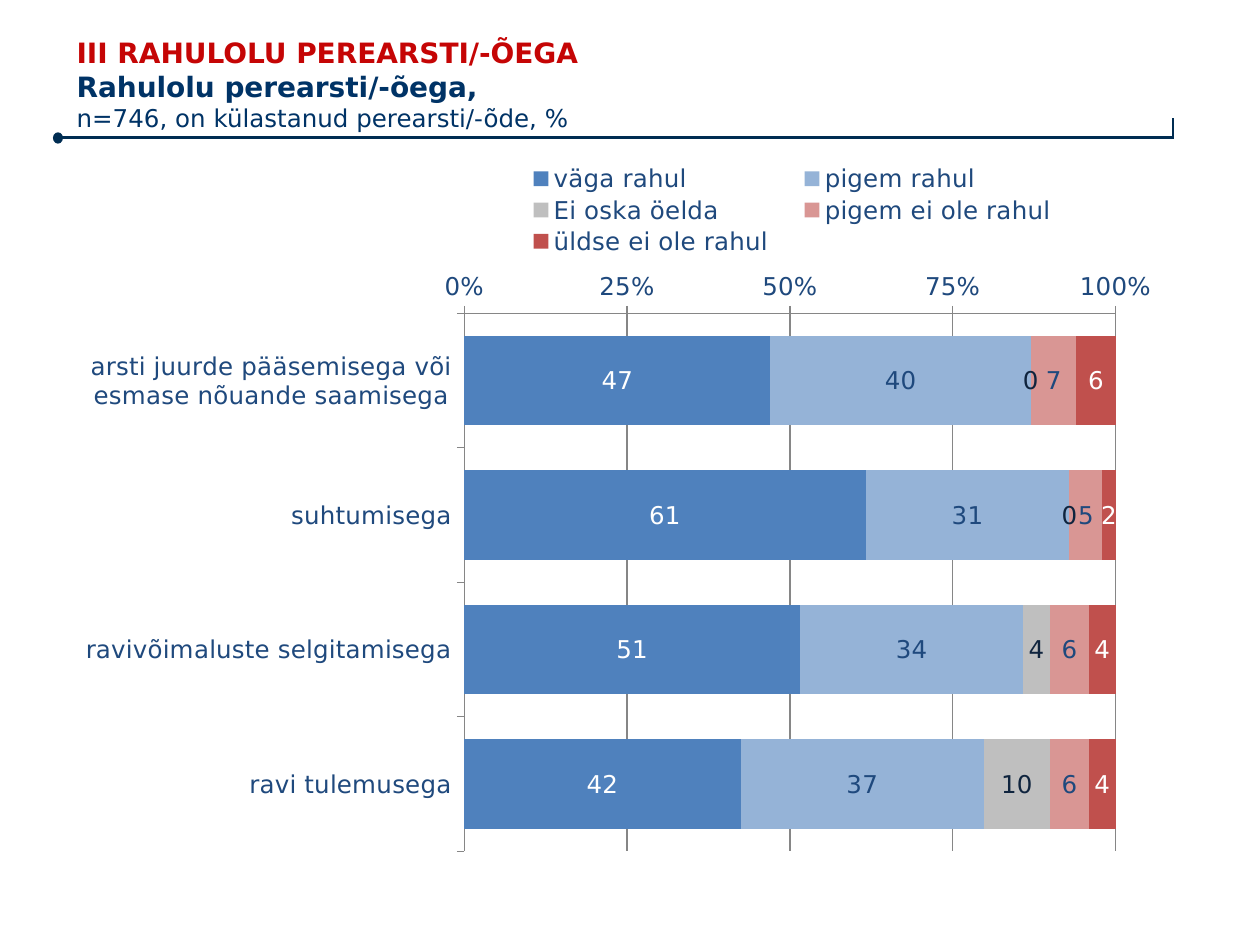
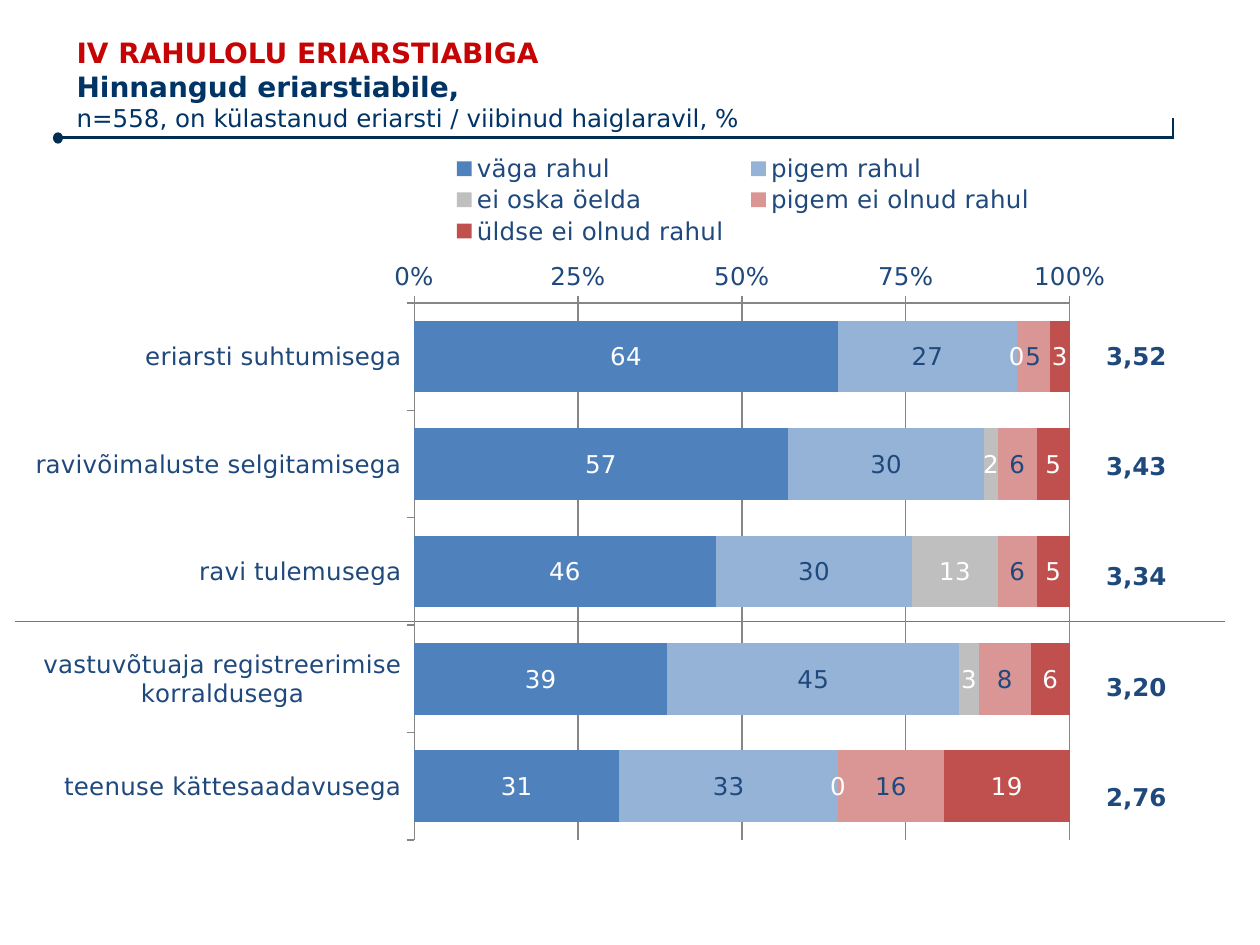
import pptx
import pptx.chart.data
import pptx.dml.color
import pptx.enum.chart
import pptx.enum.shapes
import pptx.enum.text
import pptx.util
import lxml.etree

Inches = pptx.util.Inches
Pt = pptx.util.Pt
FONT = "DejaVu Sans"
HUES = {
    "rule": "002D52", "head": "C50505", "title": "003366", "text": "1F497D",
    "split": "4B7EBC", "axis": "868686", "white": "FFFFFF", "dark": "0F243E",
    "very": "4F81BD", "rather": "95B3D7", "unsure": "BFBFBF",
    "hardly": "D99694", "never": "C0504D",
}
BARS = ["very", "rather", "unsure", "hardly", "never"]
PLOT = (0.358, 0.223, 0.59, 0.757)
HEAD = (0.51, 0.29, 8.19, 0.75)
RULE = (0.42, 0.94, 8.89, 0.16)
DRAW = "http://schemas.openxmlformats.org/drawingml/2006/main"
CHART = "http://schemas.openxmlformats.org/drawingml/2006/chart"

PAGES = [
    {
        "head": ["III RAHULOLU PEREARSTI/-ÕEGA", "Rahulolu perearsti/-õega,",
                 "n=746, on külastanud perearsti/-õde, %"],
        "box": (0.55, 1.23, 8.76, 5.64),
        "key": (0.395, 0.01, 0.52, 0.135),
        "cats": ["arsti juurde pääsemisega või esmase nõuande saamisega",
                 "suhtumisega", "ravivõimaluste selgitamisega", "ravi tulemusega"],
        "rows": [("väga rahul", (47, 61, 51, 42)),
                 ("pigem rahul", (40, 31, 34, 37)),
                 ("Ei oska öelda", (0, 0, 4, 10)),
                 ("pigem ei ole rahul", (7, 5, 6, 6)),
                 ("üldse ei ole rahul", (6, 2, 4, 4))],
        "tags": ["white", "text", "dark", "text", "white"],
    },
    {
        "head": ["IV RAHULOLU ERIARSTIABIGA", "Hinnangud eriarstiabile,",
                 "n=558, on külastanud eriarsti / viibinud haiglaravil, %"],
        "box": (0.13, 1.15, 8.82, 5.63),
        "key": (0.379, 0.01, 0.55, 0.135),
        "cats": ["eriarsti suhtumisega", "ravivõimaluste selgitamisega",
                 "ravi tulemusega", "vastuvõtuaja registreerimise korraldusega",
                 "teenuse kättesaadavusega"],
        "rows": [("väga rahul", (64, 57, 46, 39, 31)),
                 ("pigem rahul", (27, 30, 30, 45, 33)),
                 ("ei oska öelda", (0, 2, 13, 3, 0)),
                 ("pigem ei olnud rahul", (5, 6, 6, 8, 16)),
                 ("üldse ei olnud rahul", (3, 5, 5, 6, 19))],
        "tags": ["white", "text", "white", "text", "white"],
        "means": ["3,52", "3,43", "3,34", "3,20", "2,76"],
    },
]


def put(thing, **vals):
    for key, val in vals.items():
        setattr(thing, key, val)


def tint(name):
    return pptx.dml.color.RGBColor.from_string(HUES[name])


def fill(thing, hue):
    thing.fill.solid()
    thing.fill.fore_color.rgb = tint(hue)


def style(font, size, hue, bold=False):
    put(font, name=FONT, size=Pt(size), bold=bold)
    font.color.rgb = tint(hue)


def line(slide, start, end, hue, width):
    ends = [Inches(n) for n in (*start, *end)]
    item = slide.shapes.add_connector(pptx.enum.shapes.MSO_CONNECTOR.STRAIGHT, *ends)
    item.line.color.rgb = tint(hue)
    item.line.width = Pt(width)
    lxml.etree.SubElement(item._element.spPr, f"{{{DRAW}}}effectLst")


def write(slide, box, rows, gap=0, **frame):
    text = slide.shapes.add_textbox(*map(Inches, box)).text_frame
    put(text, word_wrap=True, **frame)
    for num, (words, size, hue, bold) in enumerate(rows):
        para = text.add_paragraph() if num else text.paragraphs[0]
        para.text = words
        para.space_before = Pt(gap if num else 0)
        style(para.font, size, hue, bold)


def rule(slide, box):
    left, top, width, height = box
    right, base = left + width, top + height
    mid = base - 0.01
    line(slide, (right, top), (right, base), "rule", 1.5)
    line(slide, (left + 0.05, mid), (right, mid), "rule", 1.5)
    dot = slide.shapes.add_shape(pptx.enum.shapes.MSO_SHAPE.OVAL,
                                 *map(Inches, (left, mid - 0.04, 0.08, 0.09)))
    dot.shadow.inherit = False
    fill(dot, "rule")
    dot.line.fill.background()


def header(slide, box, words):
    looks = [(16, "head", True), (16, "title", True), (14, "title", False)]
    rows = [(word, *look) for word, look in zip(words, looks)]
    write(slide, box, rows, vertical_anchor=pptx.enum.text.MSO_ANCHOR.MIDDLE)


def means(slide, box, words):
    left, top, width, height = box
    split = top + 3.78
    write(slide, (left + 8.55, top + 1.51, 0.96, 3.84),
          [(word, 14, "text", True) for word in words], gap=46.1)
    line(slide, (left - 0.01, split), (left + 9.59, split), "split", 0.75)


def place(host, spot, inner=False):
    for old in host.findall(f"{{{CHART}}}layout"):
        host.remove(old)
    lay = lxml.etree.Element(f"{{{CHART}}}layout")
    form = lxml.etree.SubElement(lay, f"{{{CHART}}}manualLayout")
    parts = [("layoutTarget", "inner")] if inner else []
    parts += [("xMode", "edge"), ("yMode", "edge"), *zip("xywh", spot)]
    for tag, val in parts:
        lxml.etree.SubElement(form, f"{{{CHART}}}{tag}", val=str(val))
    host.insert(0 if inner else 1, lay)


def clear(chart):
    shell = lxml.etree.Element(f"{{{CHART}}}spPr")
    lxml.etree.SubElement(shell, f"{{{DRAW}}}noFill")
    edge = lxml.etree.SubElement(shell, f"{{{DRAW}}}ln")
    lxml.etree.SubElement(edge, f"{{{DRAW}}}noFill")
    chart._chartSpace.find(f"{{{CHART}}}chart").addnext(shell)


def bars(slide, box, page):
    data = pptx.chart.data.CategoryChartData(number_format="0")
    data.categories = page["cats"]
    for name, vals in page["rows"]:
        data.add_series(name, vals)
    kind = pptx.enum.chart.XL_CHART_TYPE.BAR_STACKED_100
    chart = slide.shapes.add_chart(kind, *map(Inches, box), data).chart
    put(chart, has_title=False, has_legend=True)
    style(chart.font, 14, "text")
    clear(chart)
    put(chart.legend, include_in_layout=False,
        position=pptx.enum.chart.XL_LEGEND_POSITION.TOP)
    place(chart.legend._element, page["key"])
    place(chart._chartSpace.chart.plotArea, PLOT, inner=True)
    plot = chart.plots[0]
    put(plot, gap_width=50, overlap=100, vary_by_categories=False)
    for row, hue, tag in zip(plot.series, BARS, page["tags"]):
        fill(row.format, hue)
        put(row.data_labels, show_value=True, number_format="0",
            number_format_is_linked=False)
        style(row.data_labels.font, 14, tag)
    cats, vals = chart.category_axis, chart.value_axis
    cats.reverse_order = True
    put(vals, major_unit=0.25, has_major_gridlines=True)
    put(vals.tick_labels, number_format="0%", number_format_is_linked=False)
    for axis in (cats, vals):
        put(axis, major_tick_mark=pptx.enum.chart.XL_TICK_MARK.OUTSIDE,
            minor_tick_mark=pptx.enum.chart.XL_TICK_MARK.NONE)
    for part in (cats, vals, vals.major_gridlines):
        part.format.line.color.rgb = tint("axis")
        part.format.line.width = Pt(0.75)


def build(deck, page):
    slide = deck.slides.add_slide(deck.slide_layouts[6])
    rule(slide, RULE)
    header(slide, HEAD, page["head"])
    if "means" in page:
        means(slide, page["box"], page["means"])
    bars(slide, page["box"], page)


def main():
    deck = pptx.Presentation()
    put(deck, slide_width=Inches(10), slide_height=Inches(7.5))
    for page in PAGES:
        build(deck, page)
    deck.save("out.pptx")


if __name__ == "__main__":
    main()
